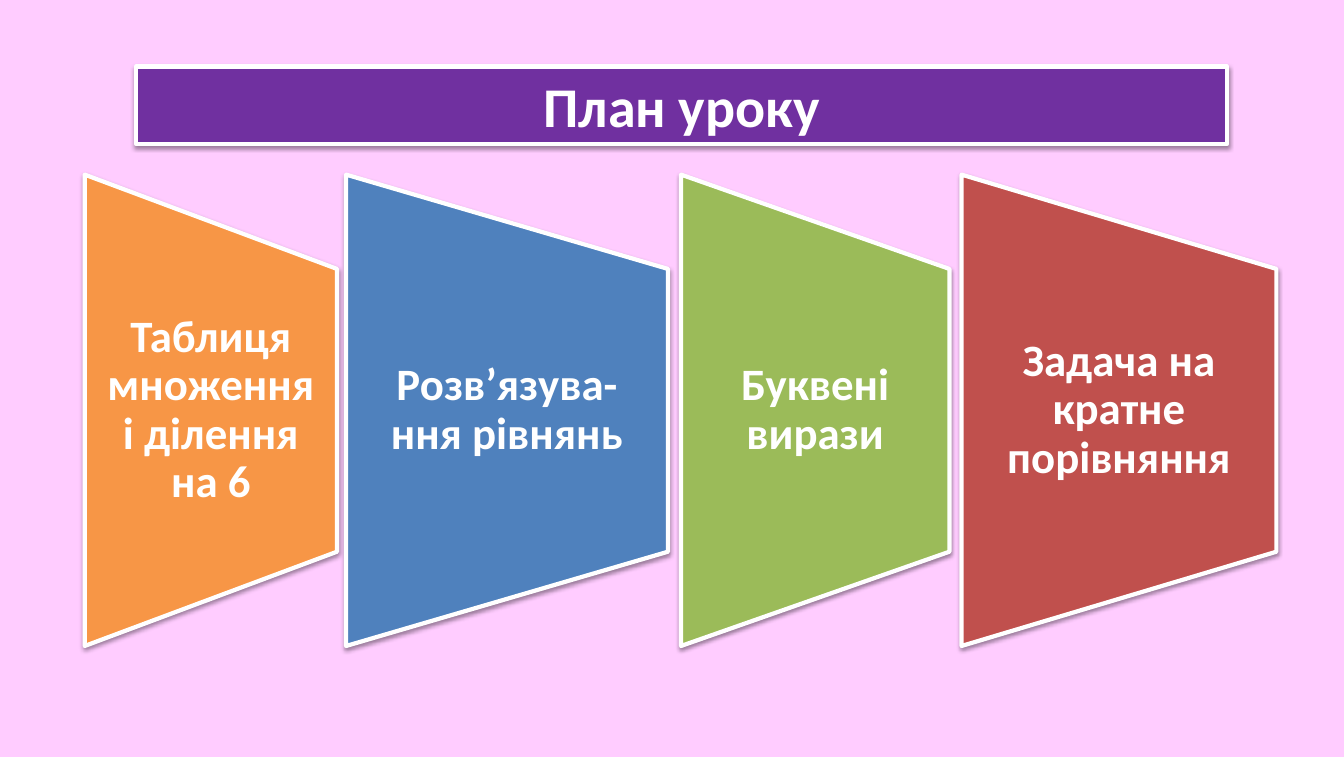
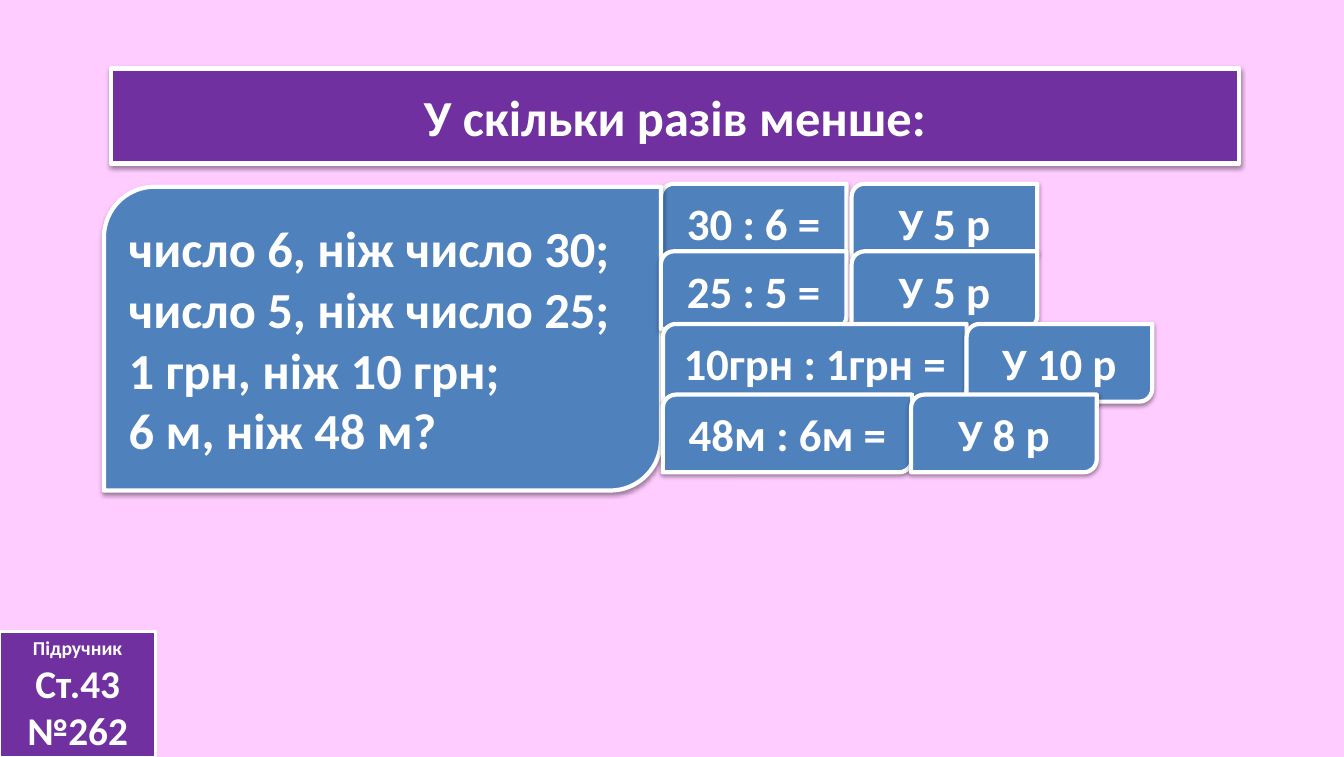
"""Builds two slides of a maths lesson: the plan and a comparison exercise."""
from lxml import etree
from pptx import Presentation
from pptx.dml.color import RGBColor
from pptx.enum.shapes import MSO_SHAPE
from pptx.enum.text import MSO_ANCHOR, PP_ALIGN
from pptx.oxml.ns import qn
from pptx.util import Inches, Pt

RECT = MSO_SHAPE.RECTANGLE
LEAF = MSO_SHAPE.ROUND_2_DIAG_RECTANGLE
TRAPEZOID = MSO_SHAPE.FLOWCHART_MANUAL_OPERATION
MIDDLE = MSO_ANCHOR.MIDDLE
LEFT, CENTER = PP_ALIGN.LEFT, PP_ALIGN.CENTER

FONT = "Calibri"
COLORS = {
    "background": "FFCCFF",
    "purple": "7030A0",
    "orange": "F79646",
    "blue": "4F81BD",
    "green": "9BBB59",
    "red": "C0504D",
    "white": "FFFFFF",
    "shadow": "000000",
}
STEP_TOP, STEP_HEIGHT = 1.73, 4.67
STEPS = [
    (0.84, 2.5, "orange", "Таблиця множення і ділення на 6"),
    (3.43, 3.19, "blue", "Розв’язува-ння рівнянь"),
    (6.75, 2.66, "green", "Буквені вирази"),
    (9.53, 3.12, "red", "Задача на кратне порівняння"),
]
TILE_HEIGHT, ANSWER_WIDTH = 0.77, 1.84
QUESTIONS = [
    "число 6, ніж число 30;",
    "число 5, ніж число 25;",
    "1 грн, ніж 10 грн;",
    "6 м, ніж 48 м?",
]
SOLUTIONS = [
    (1.82, 6.55, 1.84, "30 : 6 =", 8.44, "У 5 р"),
    (2.49, 6.55, 1.84, "25 : 5 =", 8.44, "У 5 р"),
    (3.21, 6.57, 3.01, "10грн : 1грн =", 9.58, "У 10 р"),
    (3.91, 6.57, 2.47, "48м : 6м =", 9.03, "У 8 р"),
]


def rgb(name):
    """Return the named colour."""
    return RGBColor.from_string(COLORS[name])


def add_shadow(sp):
    """Give a shape a soft shadow below it."""
    effects = sp._element.spPr.find(qn("a:effectLst"))
    shadow = etree.SubElement(effects, qn("a:outerShdw"), blurRad=str(Pt(3.1)),
                              dist=str(Pt(1.6)), dir="5400000", rotWithShape="0")
    color = etree.SubElement(shadow, qn("a:srgbClr"), val=COLORS["shadow"])
    etree.SubElement(color, qn("a:alpha"), val="38000")


def add_box(s, kind, x, y, w, h, color, line=3, shadow=True, rotation=0):
    """Add a filled shape with a white outline."""
    sp = s.shapes.add_shape(kind, Inches(x), Inches(y), Inches(w), Inches(h))
    sp.rotation = rotation
    sp.fill.solid()
    sp.fill.fore_color.rgb = rgb(color)
    sp.line.color.rgb = rgb("white")
    sp.line.width = Pt(line)
    sp.shadow.inherit = False
    if shadow:
        add_shadow(sp)
    return sp


def set_text(sp, *lines, sizes=(32,), align=CENTER, spacing=None, side=0.1, top=0.05):
    """Write one paragraph per line; the last size serves the remaining lines."""
    tf = sp.text_frame
    tf.word_wrap = True
    tf.vertical_anchor = MIDDLE
    tf.margin_left = tf.margin_right = Inches(side)
    tf.margin_top = tf.margin_bottom = Inches(top)
    for i, line in enumerate(lines):
        p = tf.paragraphs[0] if i == 0 else tf.add_paragraph()
        p.alignment = align
        p.line_spacing = spacing
        r = p.add_run()
        r.text = line
        r.font.name = FONT
        r.font.size = Pt(sizes[min(i, len(sizes) - 1)])
        r.font.bold = True
        r.font.color.rgb = rgb("white")


def add_slide(prs, title, x, y, w, h, size):
    """Add a slide with the shared background and a title band."""
    s = prs.slides.add_slide(prs.slide_layouts[6])
    s.background.fill.solid()
    s.background.fill.fore_color.rgb = rgb("background")
    set_text(add_box(s, RECT, x, y, w, h, "purple"), title, sizes=(size,))
    return s


def add_step(s, x, w, color, text):
    """Add a trapezoid turned on its side, with upright text over it."""
    middle = STEP_TOP + STEP_HEIGHT / 2
    add_box(s, TRAPEZOID, x + (w - STEP_HEIGHT) / 2, middle - w / 2,
            STEP_HEIGHT, w, color, rotation=270)
    label = s.shapes.add_textbox(Inches(x), Inches(middle - 1.4), Inches(w), Inches(2.8))
    set_text(label, text, spacing=0.9, side=0.22, top=0)


def add_solution(s, y, x, w, expression, answer_x, answer):
    """Add a division and its answer on two tiles."""
    for left, width, text in ((x, w, expression), (answer_x, ANSWER_WIDTH, answer)):
        set_text(add_box(s, LEAF, left, y, width, TILE_HEIGHT, "blue"), text)


def build_plan(prs):
    """Build the lesson plan slide."""
    s = add_slide(prs, "План уроку", 1.35, 0.66, 10.81, 0.77, 40)
    for step in STEPS:
        add_step(s, *step)


def build_exercise(prs):
    """Build the comparison exercise slide."""
    s = add_slide(prs, "У скільки разів менше:", 1.1, 0.68, 11.18, 0.94, 36)
    add_solution(s, *SOLUTIONS[0])
    panel = add_box(s, LEAF, 1.03, 1.85, 5.52, 3.01, "blue")
    set_text(panel, *QUESTIONS, sizes=(36,), align=LEFT)
    for solution in SOLUTIONS[1:]:
        add_solution(s, *solution)
    textbook = add_box(s, RECT, 0, 6.26, 1.54, 1.24, "purple", line=2, shadow=False)
    set_text(textbook, "Підручник", "Ст.43 №262", sizes=(14, 28))


def main():
    """Build and save the presentation."""
    prs = Presentation()
    prs.slide_width, prs.slide_height = Inches(13.32), Inches(7.5)
    build_plan(prs)
    build_exercise(prs)
    prs.save("out.pptx")


if __name__ == "__main__":
    main()
